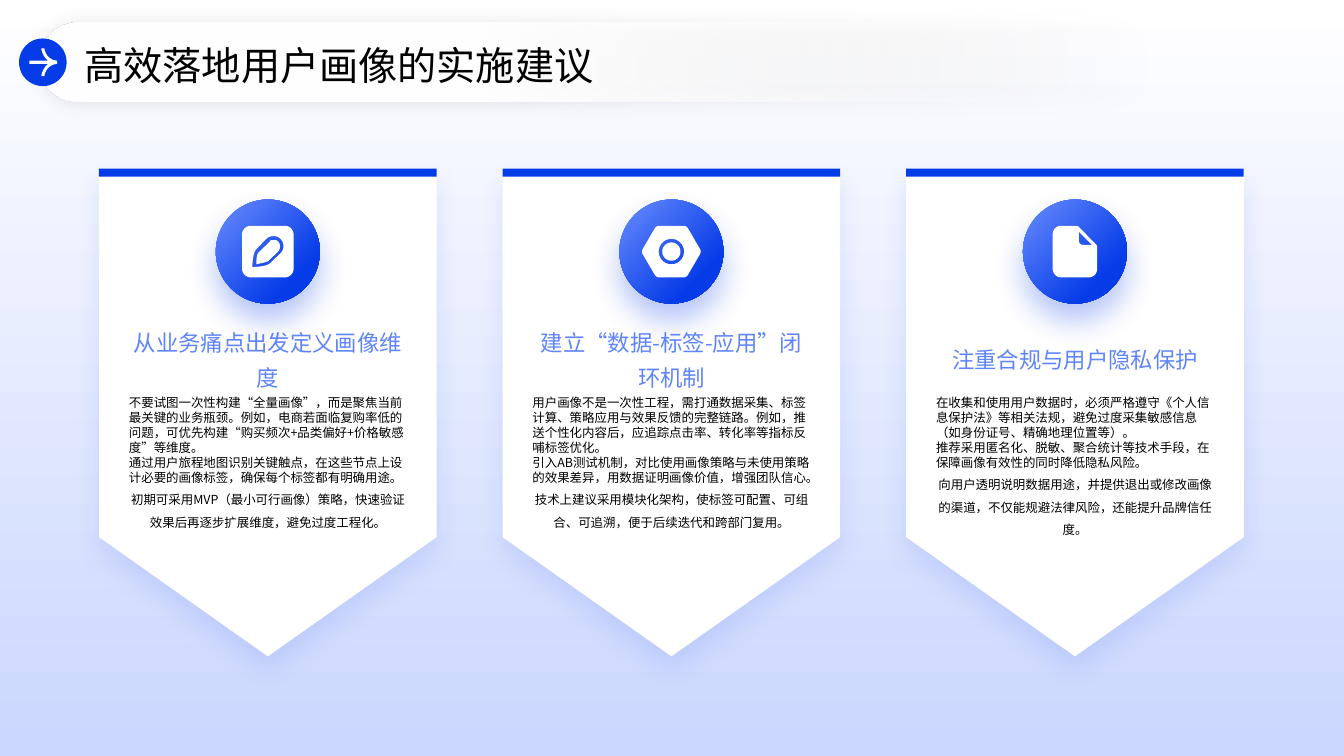
from math import cos, dist, sin, tau

from lxml.etree import SubElement
from pptx import Presentation
from pptx.dml.color import RGBColor
from pptx.enum.shapes import MSO_SHAPE as SHAPE
from pptx.enum.text import MSO_ANCHOR as ANCHOR, PP_ALIGN as ALIGN
from pptx.oxml.ns import qn
from pptx.util import Cm, Pt

WHITE = RGBColor(0xFF, 0xFF, 0xFF)
BLACK = RGBColor(0, 0, 0)
BLUE = RGBColor(0x06, 0x3C, 0xE8)
SKY = RGBColor(0x60, 0x85, 0xFB)
PALE = RGBColor(0xCA, 0xD6, 0xFE)
FONT = "Noto Sans CJK SC"
WIDTH, HEIGHT = 33.87, 19.05
CARD_CENTER, CARD_PITCH = 6.75, 10.17

CARDS = [
    ("从业务痛点出发定义画像维度", [
        "不要试图一次性构建“全量画像”，而是聚焦当前最关键的业务瓶颈。例如，电商若面临复购率低的问题，可优先构建“购买频次+品类偏好+价格敏感度”等维度。",
        "通过用户旅程地图识别关键触点，在这些节点上设计必要的画像标签，确保每个标签都有明确用途。",
        "初期可采用MVP（最小可行画像）策略，快速验证效果后再逐步扩展维度，避免过度工程化。",
    ]),
    ("建立“数据-标签-应用”闭环机制", [
        "用户画像不是一次性工程，需打通数据采集、标签计算、策略应用与效果反馈的完整链路。例如，推送个性化内容后，应追踪点击率、转化率等指标反哺标签优化。",
        "引入AB测试机制，对比使用画像策略与未使用策略的效果差异，用数据证明画像价值，增强团队信心。",
        "技术上建议采用模块化架构，使标签可配置、可组合、可追溯，便于后续迭代和跨部门复用。",
    ]),
    ("注重合规与用户隐私保护", [
        "在收集和使用用户数据时，必须严格遵守《个人信息保护法》等相关法规，避免过度采集敏感信息（如身份证号、精确地理位置等）。",
        "推荐采用匿名化、脱敏、聚合统计等技术手段，在保障画像有效性的同时降低隐私风险。",
        "向用户透明说明数据用途，并提供退出或修改画像的渠道，不仅能规避法律风险，还能提升品牌信任度。",
    ]),
]


def bezier(a, b, c, d, steps=10):
    for i in range(1, steps + 1):
        t = i / steps
        u = 1 - t
        yield tuple(u**3 * e + 3 * u * u * t * f + 3 * u * t * t * g + t**3 * h
                    for e, f, g, h in zip(a, b, c, d))


def curve(start, *segments):
    pts = [start]
    for seg in segments:
        if len(seg) == 2:
            pts.append(seg)
        else:
            pts.extend(bezier(pts[-1], seg[:2], seg[2:4], seg[4:]))
    return pts


def toward(a, b, length):
    t = length / dist(a, b)
    return tuple(m + (n - m) * t for m, n in zip(a, b))


def rounded(*corners):
    pts = []
    for i, (x, y, radius) in enumerate(corners):
        corner = (x, y)
        before = corners[i - 1][:2]
        after = corners[(i + 1) % len(corners)][:2]
        start, end = toward(corner, before, radius), toward(corner, after, radius)
        pts.append(start)
        pts.extend(bezier(start, toward(corner, start, radius * 0.45),
                          toward(corner, end, radius * 0.45), end))
    return pts


def circle(radius, steps=48):
    return [(radius * cos(tau * i / steps), radius * sin(tau * i / steps))
            for i in range(steps)]


PENCIL = [
    rounded((-6.5, -6.5, 2.2), (6.5, -6.5, 2.2), (6.5, 6.5, 2.2), (-6.5, 6.5, 2.2)),
    curve((1.4, -3.9), (0.8, -3.9, 0.1, -3.7, -0.4, -3.2), (-2.9, -0.6),
          (-3.9, 0.4, -3.9, 3.9, -3.9, 3.9), (-3.9, 3.9, -0.4, 3.9, 0.6, 2.9),
          (3.2, 0.4), (4.2, -0.6, 4.2, -2.2, 3.2, -3.2),
          (2.7, -3.7, 2.2, -3.9, 1.4, -3.9)),
    curve((1.4, -2.9), (1.9, -2.9, 2.4, -2.9, 2.7, -2.4),
          (3.2, -1.9, 3.2, -0.9, 2.7, -0.1), (0.1, 2.4),
          (-0.4, 2.7, -1.6, 2.9, -2.9, 3.2), (-2.9, 1.6, -2.7, 0.4, -2.2, 0.1),
          (0.4, -2.4), (0.6, -2.9, 0.9, -2.9, 1.4, -2.9)),
]
NUT = [
    rounded((-7.6, 0, 0.7), (-3.8, -6.5, 0.7), (3.8, -6.5, 0.7),
            (7.6, 0, 0.7), (3.8, 6.5, 0.7), (-3.8, 6.5, 0.7)),
    circle(3.2),
    circle(2.3),
]
DOCUMENT = [
    rounded((-5.6, -6.5, 2.1), (0.7, -6.5, 0.4), (5.6, -1.5, 0.4),
            (5.6, 6.5, 2.1), (-5.6, 6.5, 2.1)),
    rounded((1, -5, 0.01), (1, -1.7, 1), (4.3, -1.7, 0.01)),
]
ARROW_TOP = curve((-3.5, -0.4), (1.2, -0.4), (0.3, -1.2, -0.3, -2.2, -0.5, -3.5),
                  (0.3, -3.5), (0.5, -1.8, 1.8, -0.5, 3.5, -0.4))
ARROW = [ARROW_TOP + [(x, -y) for x, y in reversed(ARROW_TOP)]]


def add_gradient(s, angle, *stops):
    s.fill.gradient()
    s.fill.gradient_angle = angle
    for stop, (position, color) in zip(s.fill.gradient_stops, stops):
        stop.position = position
        stop.color.rgb = color


def add_shadow(s, color, alpha, blur, distance, angle):
    effects = s._element.spPr.find(qn("a:effectLst"))
    shadow = SubElement(effects, qn("a:outerShdw"), blurRad=str(Pt(blur)),
                        dist=str(Pt(distance)), dir=str(angle * 60000),
                        algn="ctr", rotWithShape="0")
    clr = SubElement(shadow, qn("a:srgbClr"), val=str(color))
    SubElement(clr, qn("a:alpha"), val=str(alpha * 1000))


def paint(s, color):
    s.shadow.inherit = False
    s.line.fill.background()
    s.fill.solid()
    s.fill.fore_color.rgb = color
    return s


def add_block(slide, kind, x, y, w, h, color=WHITE):
    return paint(slide.shapes.add_shape(kind, Cm(x), Cm(y), Cm(w), Cm(h)), color)


def add_icon(slide, x, y, contours):
    scaled = [[(round(px * 100), round(py * 100)) for px, py in pts] for pts in contours]
    builder = slide.shapes.build_freeform(*scaled[0][0], scale=Cm(0.001))
    builder.add_line_segments(scaled[0][1:])
    for pts in scaled[1:]:
        builder.move_to(*pts[0])
        builder.add_line_segments(pts[1:])
    paint(builder.convert_to_shape(Cm(x), Cm(y)), WHITE)


def add_text(slide, x, y, w, h, lines, size, color, anchor=ANCHOR.MIDDLE):
    tf = slide.shapes.add_textbox(Cm(x), Cm(y), Cm(w), Cm(h)).text_frame
    tf.word_wrap = True
    tf.vertical_anchor = anchor
    tf.margin_left = tf.margin_right = tf.margin_top = tf.margin_bottom = 0
    for i, (text, align, spacing) in enumerate(lines):
        p = tf.add_paragraph() if i else tf.paragraphs[0]
        p.alignment = align
        p.line_spacing = spacing
        r = p.add_run()
        r.text = text
        r.font.size = Pt(size)
        r.font.name = FONT
        r.font.color.rgb = color
        SubElement(r._r.get_or_add_rPr(), qn("a:ea"), typeface=FONT)


def add_card(slide, center, heading, points, icon):
    length, width = 12.27, 8.51
    s = add_block(slide, SHAPE.PENTAGON, center - length / 2, 6.15, length, width)
    s.adjustments[0] = 0.353
    s.rotation = 90
    add_shadow(s, BLUE, 10, 18, 9, 90)
    add_block(slide, SHAPE.RECTANGLE, center - width / 2, 4.25, width, 0.2, BLUE)
    left = center - 3.5
    add_text(slide, left, 8.03, 7.01, 1.88, [(heading, ALIGN.CENTER, 1.3)], 16, SKY)
    *details, closing = points
    lines = [(text, ALIGN.LEFT, 1.0) for text in details]
    lines.append((closing, ALIGN.CENTER, 1.5))
    add_text(slide, left, 9.96, 7.01, 4.29, lines, 8.9, BLACK, ANCHOR.TOP)
    s = add_block(slide, SHAPE.OVAL, center - 1.31, 5.03, 2.62, 2.62)
    add_gradient(s, 315, (0.07, SKY), (0.76, BLUE))
    add_shadow(s, BLUE, 30, 22, 12, 90)
    add_icon(slide, center, 6.34, icon)


def add_header(slide, title):
    s = add_block(slide, SHAPE.ROUNDED_RECTANGLE, 0.97, 0.56, 28.14, 2.01)
    s.adjustments[0] = 0.5
    add_gradient(s, 180, (0, WHITE), (0.6, WHITE))
    clear = next(s._element.spPr.iter(qn("a:srgbClr")))
    SubElement(clear, qn("a:alpha"), val="0")
    add_shadow(s, BLACK, 10, 13, 0, 0)
    add_text(slide, 2.13, 0.97, 25.45, 1.19, [(title, ALIGN.LEFT, 1.1)], 28, BLACK)
    add_block(slide, SHAPE.OVAL, 0.48, 0.97, 1.2, 1.2, BLUE)
    add_icon(slide, 1.09, 1.57, ARROW)


def main():
    prs = Presentation()
    prs.slide_width, prs.slide_height = Cm(WIDTH), Cm(HEIGHT)
    slide = prs.slides.add_slide(prs.slide_layouts[6])
    backdrop = add_block(slide, SHAPE.RECTANGLE, 0, 0, WIDTH, HEIGHT)
    add_gradient(backdrop, 270, (0, WHITE), (1, PALE))
    for i, ((heading, points), icon) in enumerate(zip(CARDS, (PENCIL, NUT, DOCUMENT))):
        add_card(slide, CARD_CENTER + i * CARD_PITCH, heading, points, icon)
    add_header(slide, "高效落地用户画像的实施建议")
    prs.save("out.pptx")


if __name__ == "__main__":
    main()
